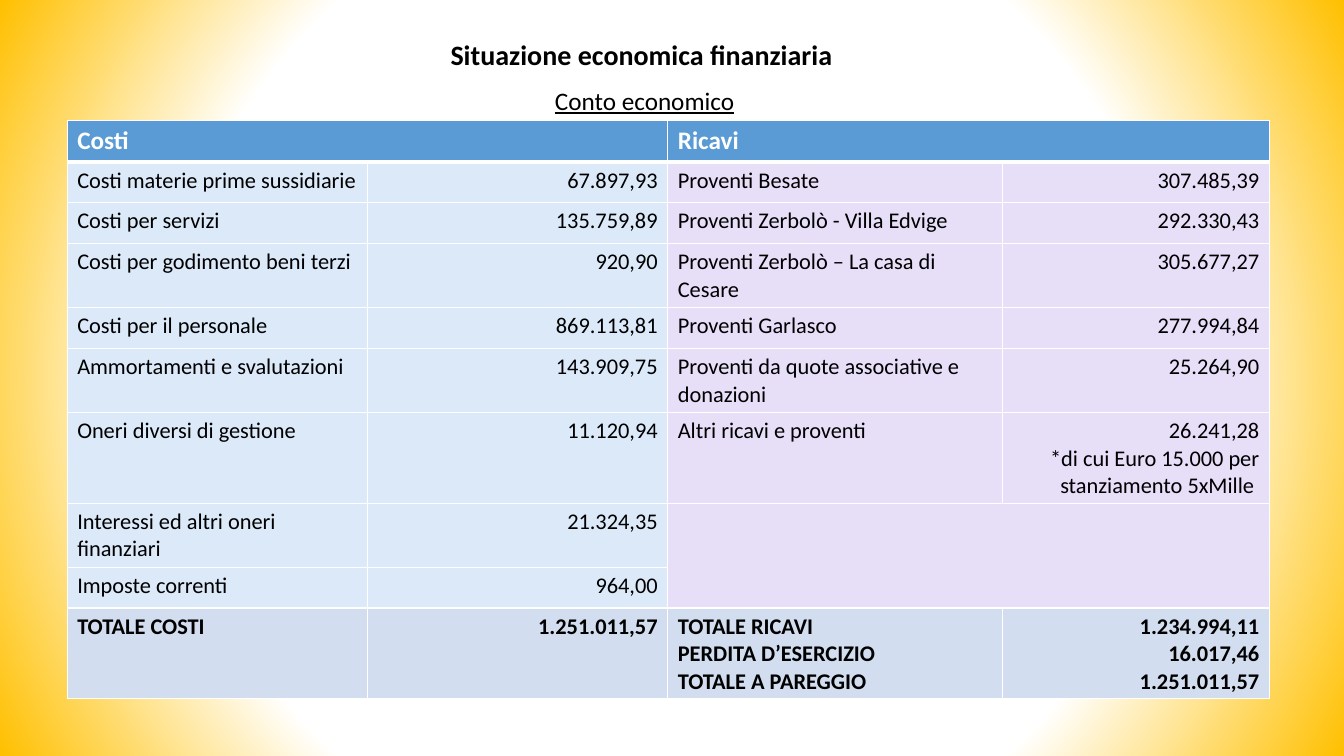
from lxml.etree import SubElement
from pptx import Presentation
from pptx.dml.color import RGBColor
from pptx.enum.text import PP_ALIGN
from pptx.oxml import parse_xml
from pptx.oxml.ns import nsdecls, qn
from pptx.util import Pt

PX = 9525  # EMU in one px, 96 px to the inch
FONT = "Calibri"
BLACK = RGBColor(0x00, 0x00, 0x00)
WHITE = RGBColor(0xFF, 0xFF, 0xFF)
AMBER = RGBColor(0xFF, 0xC0, 0x00)
HEADER_BLUE = RGBColor(0x5B, 0x9B, 0xD5)
COST_BLUE = RGBColor(0xDC, 0xE9, 0xF9)
REVENUE_LILAC = RGBColor(0xE7, 0xDE, 0xF8)
TOTAL_BLUE = RGBColor(0xD2, 0xDE, 0xEF)

COLUMN_WIDTHS = [286, 286, 319, 254]
ROW_HEIGHTS = [39, 39, 39, 61, 39, 61, 86, 61, 39, 86]
ACCOUNTS = [
    ("Costi", "", "Ricavi", ""),
    ("Costi materie prime sussidiarie", "67.897,93", "Proventi Besate", "307.485,39"),
    ("Costi per servizi", "135.759,89", "Proventi Zerbolò - Villa Edvige", "292.330,43"),
    ("Costi per godimento beni terzi", "920,90",
     "Proventi Zerbolò – La casa di Cesare", "305.677,27"),
    ("Costi per il personale", "869.113,81", "Proventi Garlasco", "277.994,84"),
    ("Ammortamenti e svalutazioni", "143.909,75",
     "Proventi da quote associative e donazioni", "25.264,90"),
    ("Oneri diversi di gestione", "11.120,94", "Altri ricavi e proventi",
     "26.241,28\n*di cui Euro 15.000 per stanziamento 5xMille "),
    ("Interessi ed altri oneri finanziari", "21.324,35", "", ""),
    ("Imposte correnti", "964,00", "", ""),
    ("TOTALE COSTI", "1.251.011,57",
     "TOTALE RICAVI\nPERDITA D’ESERCIZIO\nTOTALE A PAREGGIO",
     "1.234.994,11\n16.017,46\n1.251.011,57"),
]
LAST_ROW = len(ACCOUNTS) - 1


def style_paragraph(paragraph, size, color, bold, align):
    paragraph.alignment = align
    for run in paragraph.runs:
        run.font.name = FONT
        run.font.size = Pt(size)
        run.font.bold = bold
        run.font.color.rgb = color


def paint_background(slide):
    """White centre fading to amber at the edges."""
    background = parse_xml(
        f'<p:bg {nsdecls("p", "a")}><p:bgPr><a:gradFill rotWithShape="1"><a:gsLst>'
        f'<a:gs pos="0"><a:srgbClr val="{WHITE}"/></a:gs>'
        f'<a:gs pos="65000"><a:srgbClr val="{WHITE}"/></a:gs>'
        f'<a:gs pos="100000"><a:srgbClr val="{AMBER}"><a:alpha val="68000"/></a:srgbClr></a:gs>'
        '</a:gsLst><a:path path="circle">'
        '<a:fillToRect l="50000" t="50000" r="50000" b="50000"/></a:path>'
        '</a:gradFill><a:effectLst/></p:bgPr></p:bg>')
    slide.element.cSld.insert(0, background)


def add_heading(slide, left, top, width, height):
    heading = slide.shapes.add_textbox(left * PX, top * PX, width * PX, height * PX)
    frame = heading.text_frame
    frame.word_wrap = True
    frame.text = "Situazione economica finanziaria \nConto economico"
    title, subtitle = frame.paragraphs
    style_paragraph(title, 20, BLACK, True, PP_ALIGN.CENTER)
    style_paragraph(subtitle, 18, BLACK, False, PP_ALIGN.CENTER)
    subtitle.space_before = Pt(10)
    subtitle.runs[0].font.underline = True


def set_borders(cell, row):
    """White 1 pt grid, with a 3 pt rule under the header."""
    widths = {"a:lnL": 1, "a:lnR": 1,
              "a:lnT": 3 if row == 1 else 1, "a:lnB": 3 if row == 0 else 1}
    properties = cell._tc.get_or_add_tcPr()
    for side, points in widths.items():
        line = SubElement(properties, qn(side), w=str(Pt(points)))
        fill = SubElement(line, qn("a:solidFill"))
        SubElement(fill, qn("a:srgbClr"), val=str(WHITE))


def cell_fill(row, column):
    if row == 0:
        return HEADER_BLUE
    if row == LAST_ROW:
        return TOTAL_BLUE
    return COST_BLUE if column < 2 else REVENUE_LILAC


def add_accounts(slide, left, top):
    table = slide.shapes.add_table(
        len(ACCOUNTS), len(COLUMN_WIDTHS), left * PX, top * PX,
        sum(COLUMN_WIDTHS) * PX, sum(ROW_HEIGHTS) * PX).table
    table.horz_banding = False
    for column, width in zip(table.columns, COLUMN_WIDTHS):
        column.width = width * PX
    for row, height in zip(table.rows, ROW_HEIGHTS):
        row.height = height * PX

    # Header pairs and the empty revenue block
    table.cell(0, 0).merge(table.cell(0, 1))
    table.cell(0, 2).merge(table.cell(0, 3))
    table.cell(7, 2).merge(table.cell(8, 3))

    for r, entries in enumerate(ACCOUNTS):
        is_header = r == 0
        for c, entry in enumerate(entries):
            cell = table.cell(r, c)
            set_borders(cell, r)
            cell.fill.solid()
            cell.fill.fore_color.rgb = cell_fill(r, c)
            if not entry:
                continue
            cell.text_frame.text = entry
            for paragraph in cell.text_frame.paragraphs:
                style_paragraph(paragraph, 18 if is_header else 16,
                                WHITE if is_header else BLACK, r in (0, LAST_ROW),
                                PP_ALIGN.RIGHT if c % 2 else PP_ALIGN.LEFT)


def main():
    presentation = Presentation()
    presentation.slide_width = 1280 * PX
    presentation.slide_height = 720 * PX
    slide = presentation.slides.add_slide(presentation.slide_layouts[6])
    paint_background(slide)
    add_heading(slide, 97, 31, 1034, 84)
    add_accounts(slide, 64, 115)
    presentation.save("out.pptx")


if __name__ == "__main__":
    main()
